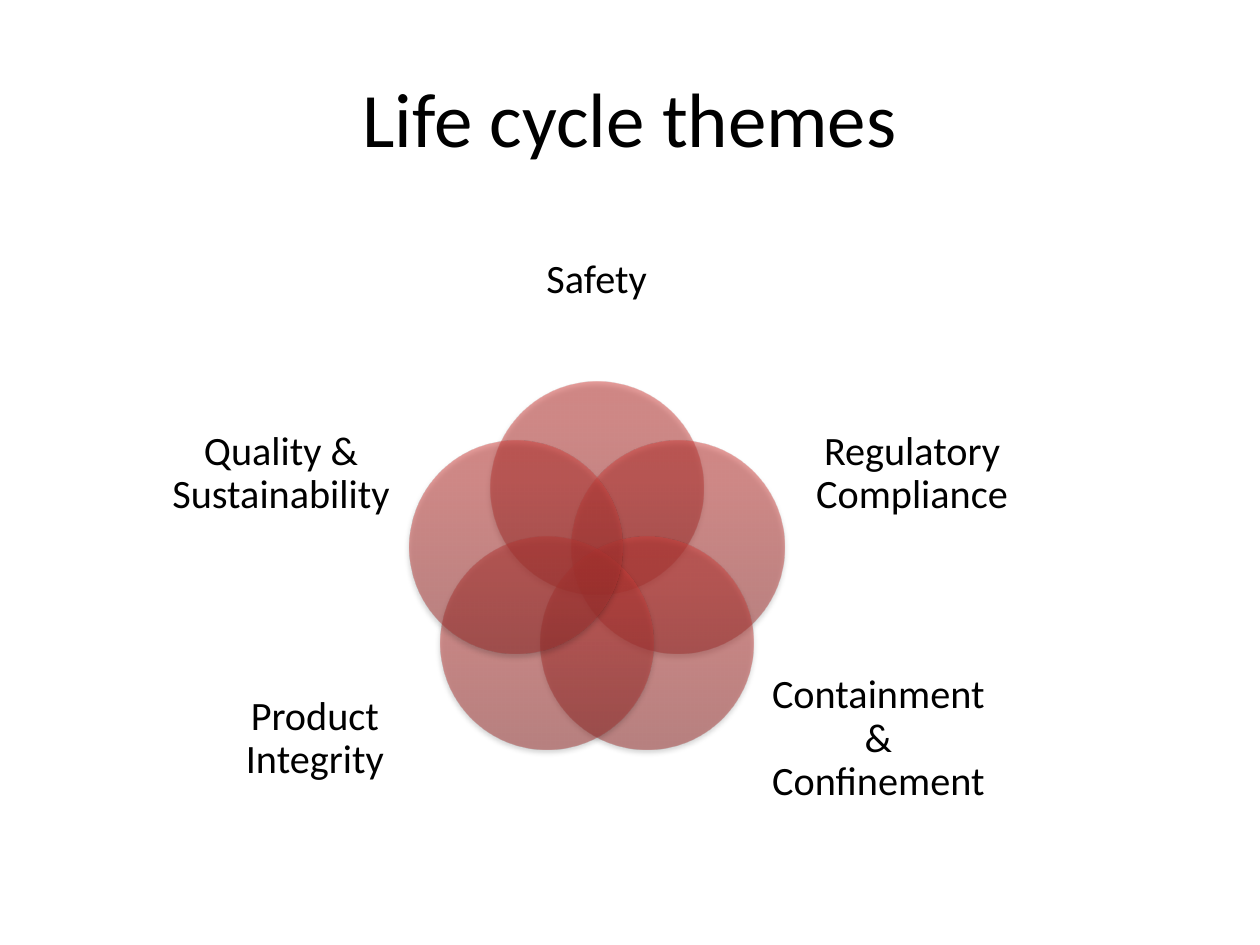
import math
from lxml import etree
from pptx import Presentation
from pptx import util as u
from pptx.dml import color
from pptx.enum import shapes, text
from pptx.oxml import ns

COLORS = {"text": "000000", "dark": "9C2F2D", "middle": "CB3E3A", "light": "CE3B37", "shadow": "000000"}
FONT = "Calibri"
PETAL_STOPS = [(0, "dark"), (80, "middle"), (100, "light")]
CIRCLE_SIZE = 4.29
RING_RADIUS = 1.72
THEMES = [
    ("Safety", 0, -5.92, 4.98, 2.87),
    ("Regulatory Compliance", 6.36, -2.01, 4.47, 3.12),
    ("Containment & Confinement", 5.68, 3.33, 4.47, 3.12),
    ("Product Integrity", -5.68, 3.33, 4.47, 3.12),
    ("Quality & Sustainability", -6.36, -2.01, 4.47, 3.12),
]


def centred_box(x, y, width, height):
    return u.Cm(x - width / 2), u.Cm(y - height / 2), u.Cm(width), u.Cm(height)


def add_text(frame, words, size):
    frame.word_wrap = True
    frame.vertical_anchor = text.MSO_ANCHOR.MIDDLE
    para = frame.paragraphs[0]
    para.alignment = text.PP_ALIGN.CENTER
    span = para.add_run()
    span.text = words
    span.font.name = FONT
    span.font.size = u.Pt(size)
    span.font.color.rgb = color.RGBColor.from_string(COLORS["text"])
    return para


def add_color(parent, name, alpha):
    tint = etree.SubElement(parent, ns.qn("a:srgbClr"), val=COLORS[name])
    etree.SubElement(tint, ns.qn("a:alpha"), val=str(alpha * 1000))


def style_circle(circle):
    circle.fill.gradient()
    circle.fill.gradient_angle = 90
    circle.line.fill.background()
    circle.shadow.inherit = False
    properties = circle.element.spPr
    stops = properties.find(".//" + ns.qn("a:gsLst"))
    for stop in list(stops):
        stops.remove(stop)
    for position, name in PETAL_STOPS:
        stop = etree.SubElement(stops, ns.qn("a:gs"), pos=str(position * 1000))
        add_color(stop, name, 50)
    shadow = etree.SubElement(
        properties.find(ns.qn("a:effectLst")), ns.qn("a:outerShdw"),
        blurRad=str(u.Pt(3.1)), dist=str(u.Pt(1.8)), dir="5400000", rotWithShape="0")
    add_color(shadow, "shadow", 35)


def add_title(page, left, top, width, height):
    title = page.shapes.title
    title.left, title.top, title.width, title.height = map(u.Cm, (left, top, width, height))
    add_text(title.text_frame, "Life cycle themes", 44)


def add_label(group, words, box):
    frame = group.shapes.add_textbox(*box).text_frame
    frame.margin_left = frame.margin_top = frame.margin_right = frame.margin_bottom = 0
    para = add_text(frame, words, 23)
    para.line_spacing = 0.9


def add_venn(page, x, y):
    group = page.shapes.add_group_shape()
    for index, (words, across, down, width, height) in enumerate(THEMES):
        angle = math.tau * index / len(THEMES)
        circle_box = centred_box(x + RING_RADIUS * math.sin(angle), y - RING_RADIUS * math.cos(angle),
                                 CIRCLE_SIZE, CIRCLE_SIZE)
        style_circle(group.shapes.add_shape(shapes.MSO_SHAPE.OVAL, *circle_box))
        add_label(group, words, centred_box(x + across, y + down, width, height))


def main():
    deck = Presentation()
    deck.slide_width, deck.slide_height = u.Cm(25.4), u.Cm(19.05)
    page = deck.slides.add_slide(deck.slide_layouts[5])
    add_title(page, 1.27, 0.76, 22.86, 3.18)
    add_venn(page, 12.03, 11.57)
    deck.save("out.pptx")


if __name__ == "__main__":
    main()
